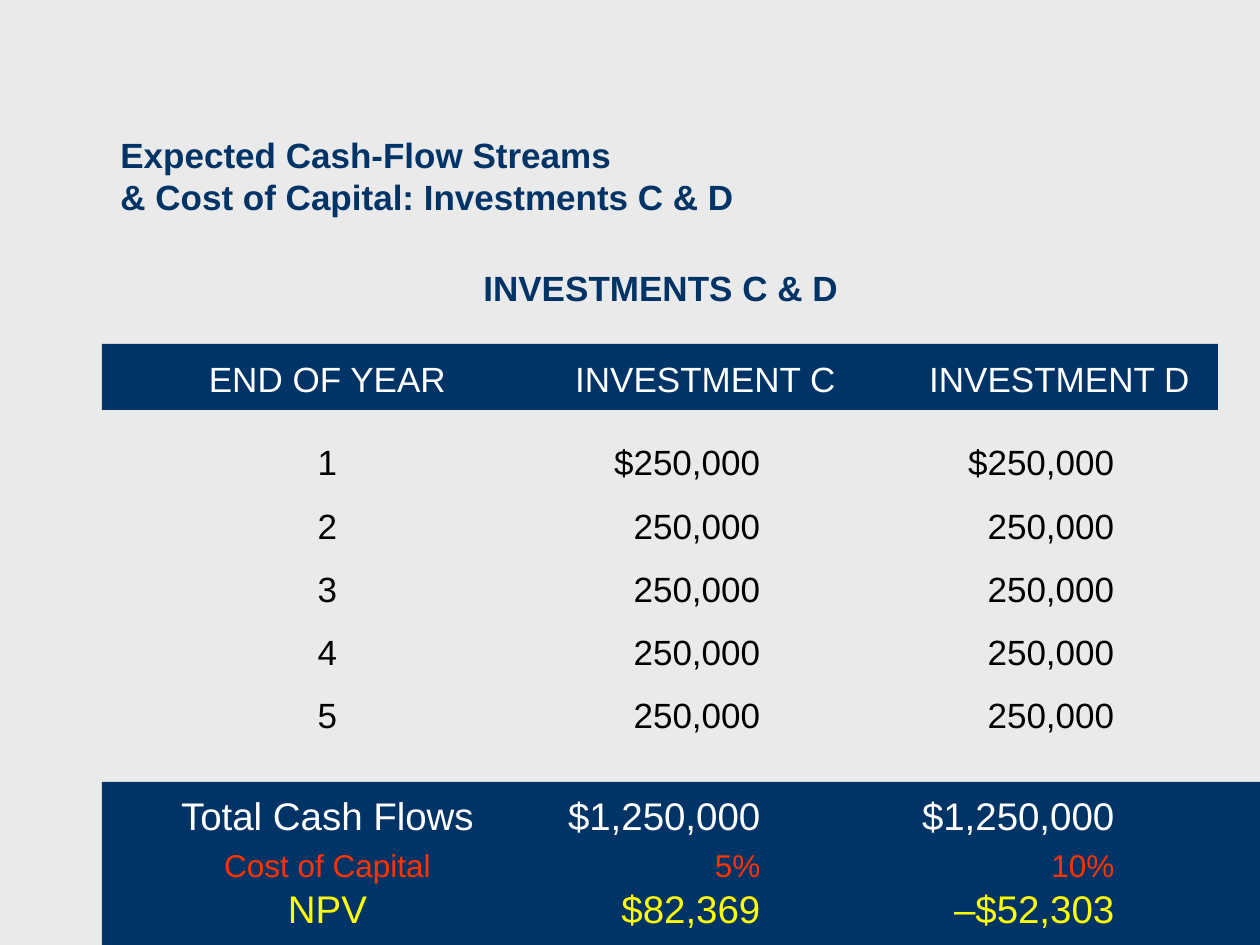
from pptx import Presentation
from pptx.dml.color import RGBColor
from pptx.enum.shapes import MSO_SHAPE
from pptx.enum.text import MSO_ANCHOR
from pptx.oxml.ns import qn
from pptx.util import Pt
from lxml import etree

RECT = MSO_SHAPE.RECTANGLE
TOP, BOTTOM = MSO_ANCHOR.TOP, MSO_ANCHOR.BOTTOM
PX = 914400 // 126
FONT = "Arial"
NAVY, WHITE, BLACK = "003366", "FFFFFF", "000000"
RED, YELLOW, GREY = "FF3300", "FFFF00", "EAEAEA"

# Content
TITLE = ["Expected Cash-Flow Streams", "& Cost of Capital: Investments C & D"]
SUBTITLE = ["INVESTMENTS C & D"]
# Rows: cells, size, colour, size of the leading tab
HEADER = [(("END OF YEAR", "INVESTMENT C", "INVESTMENT D"), 20, WHITE, 24)]
FLOWS = [(("1", "$250,000", "$250,000"), 20, BLACK, 24)] + [
    ((str(year), "250,000", "250,000"), 20, BLACK, 20) for year in range(2, 6)]
TOTALS = [
    (("Total Cash Flows", "$1,250,000", "$1,250,000"), 22, WHITE, 24),
    (("Cost of Capital", "5%", "10%"), 18, RED, 22),
    (("NPV", "$82,369", "–$52,303"), 22, YELLOW, 22),
]

# Tab stops in px from the text edge
HEADER_TABS = [(213, "ctr"), (591, "ctr"), (945, "ctr")]
FIGURE_TABS = [(213, "ctr"), (646, "r"), (1000, "r")]
LEFT = 102


def rgb(value):
    return RGBColor.from_string(value)


def add_run(p, text, size, color, bold=False):
    r = p.add_run()
    r.text = text
    r.font.name, r.font.size, r.font.bold = FONT, Pt(size), bold
    r.font.color.rgb = rgb(color)


def add_box(s, box, fill=None, anchor=TOP, wrap=True):
    box = [v * PX for v in box]
    if fill:
        sp = s.shapes.add_shape(RECT, *box)
        sp.shadow.inherit = False
        sp.fill.solid()
        sp.fill.fore_color.rgb = rgb(fill)
        sp.line.fill.background()
    else:
        sp = s.shapes.add_textbox(*box)
    tf = sp.text_frame
    tf.word_wrap, tf.vertical_anchor = wrap, anchor
    return tf


def add_heading(s, box, lines, **options):
    p = add_box(s, box, **options).paragraphs[0]
    for i, line in enumerate(lines):
        if i:
            p.add_line_break()
        add_run(p, line, 20, NAVY, bold=True)


def add_rows(s, box, rows, tabs, fill=None, spacing=1.0):
    tf = add_box(s, box, fill)
    for i, (cells, size, color, tab_size) in enumerate(rows):
        p = tf.add_paragraph() if i else tf.paragraphs[0]
        p.alignment = 1  # left
        p.line_spacing = spacing
        tab_list = etree.SubElement(p._p.get_or_add_pPr(), qn("a:tabLst"))
        for pos, align in tabs:
            etree.SubElement(tab_list, qn("a:tab"), pos=str(pos * PX), algn=align)
        add_run(p, "\t", tab_size, BLACK)
        add_run(p, "\t".join(cells), size, color)


prs = Presentation()
prs.slide_width, prs.slide_height = 1260 * PX, 945 * PX
s = prs.slides.add_slide(prs.slide_layouts[6])
s.background.fill.solid()
s.background.fill.fore_color.rgb = rgb(GREY)

# Cash-flow table: header band, yearly rows, totals band
add_rows(s, (LEFT, 344, 1116, 66), HEADER, HEADER_TABS, fill=NAVY)
add_rows(s, (LEFT, 402, 1116, 348), FLOWS, FIGURE_TABS, spacing=1.5)
add_rows(s, (LEFT, 782, 1158, 163), TOTALS, FIGURE_TABS, fill=NAVY)

# Headings
add_heading(s, (471, 260, 382, 55), SUBTITLE, wrap=False)
add_heading(s, (108, 127, 1125, 97), TITLE, anchor=BOTTOM)

prs.save("out.pptx")
